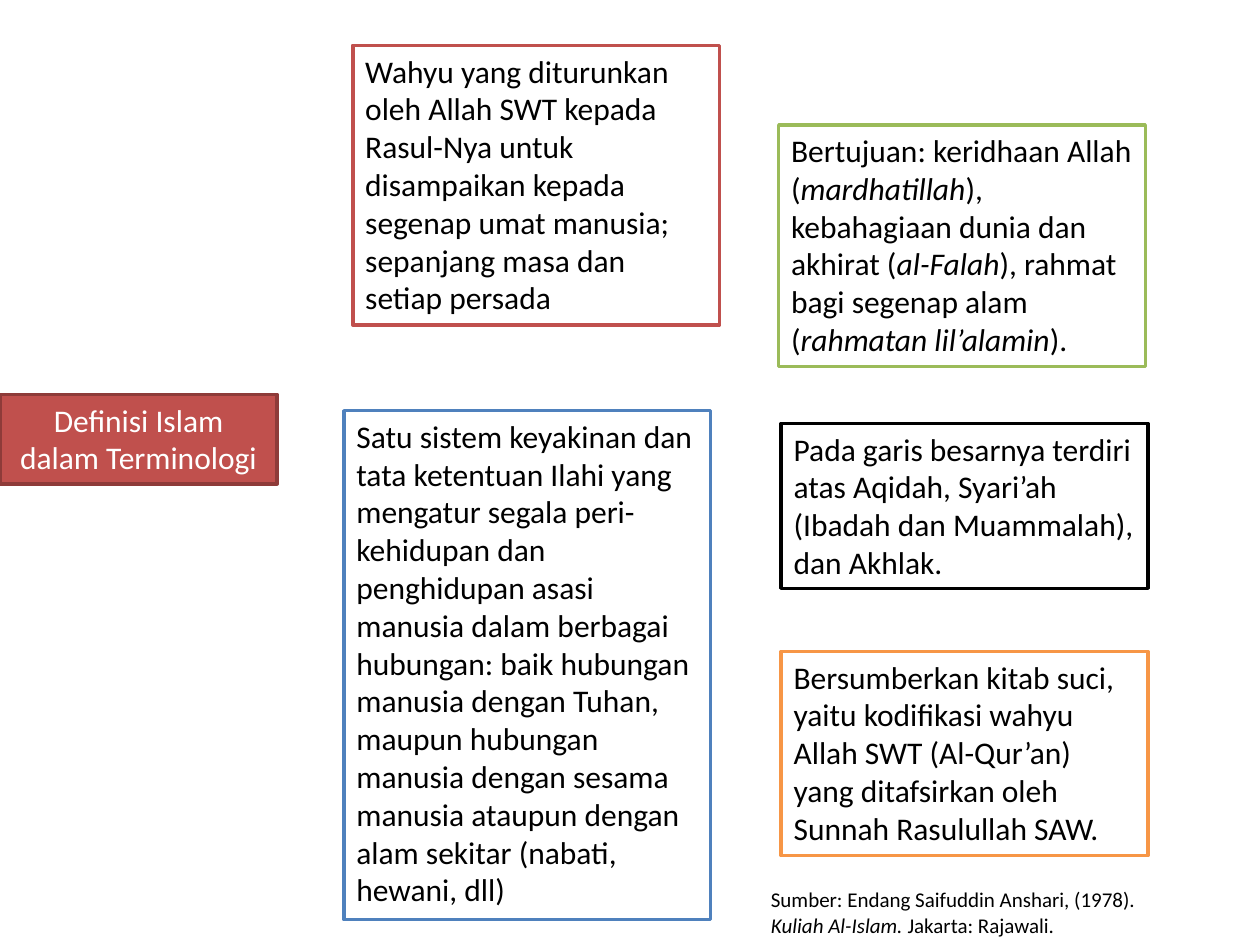
from pptx import Presentation
from pptx.dml.color import RGBColor
from pptx.enum.shapes import MSO_SHAPE
from pptx.enum.text import MSO_ANCHOR, MSO_AUTO_SIZE, PP_ALIGN
from pptx.util import Inches, Pt

COLS, ROWS = 100, 75
CELL = Inches(10) // COLS
WIDE = 29.1  # columns taken by each definition box

# left, top, height in grid cells, line colour, text (*italic*)
BOXES = [
    (28, 3.6, 22.2, "C0504D",
     "Wahyu yang diturunkan oleh Allah SWT kepada Rasul-Nya untuk "
     "disampaikan kepada segenap umat manusia; sepanjang masa dan "
     "setiap persada"),
    (27.3, 32.6, 40.4, "4F81BD",
     "Satu sistem keyakinan dan tata ketentuan Ilahi yang mengatur segala "
     "peri-kehidupan dan penghidupan asasi manusia dalam berbagai hubungan: "
     "baik hubungan manusia dengan Tuhan, maupun hubungan manusia dengan "
     "sesama manusia ataupun dengan alam sekitar (nabati, hewani, dll)"),
    (61.8, 9.9, 19.2, "9BBB59",
     "Bertujuan: keridhaan Allah (*mardhatillah*), kebahagiaan dunia dan "
     "akhirat (*al-Falah*), rahmat bagi segenap alam "
     "(*rahmatan lil’alamin*)."),
    (62, 33.6, 13.1, "000000",
     "Pada garis besarnya terdiri atas Aqidah, Syari’ah (Ibadah dan "
     "Muammalah), dan Akhlak."),
    (62, 51.7, 16.2, "F79646",
     "Bersumberkan kitab suci, yaitu kodifikasi wahyu Allah SWT (Al-Qur’an) "
     "yang ditafsirkan oleh Sunnah Rasulullah SAW."),
]


def paint(code):
    return RGBColor.from_string(code)


def place(*cells):
    """Turn grid cells into slide lengths."""
    return [round(n * CELL) for n in cells]


def write(shape, text, size=18, color="000000", align=PP_ALIGN.LEFT):
    """Fill a shape with text; parts between asterisks are italic."""
    frame = shape.text_frame
    frame.word_wrap = True
    frame.auto_size = MSO_AUTO_SIZE.SHAPE_TO_FIT_TEXT
    frame.vertical_anchor = MSO_ANCHOR.TOP
    para = frame.paragraphs[0]
    para.alignment = align
    for i, part in enumerate(text.split("*")):
        run = para.add_run()
        run.text = part
        font = run.font
        font.name, font.size, font.italic = "Calibri", Pt(size), i % 2 == 1
        font.color.rgb = paint(color)


def add_box(slide, area, text, fill, line, **style):
    box = slide.shapes.add_shape(MSO_SHAPE.RECTANGLE, *place(*area))
    box.shadow.inherit = False
    box.fill.solid()
    box.fill.fore_color.rgb = paint(fill)
    box.line.color.rgb = paint(line)
    box.line.width = Pt(2)
    write(box, text, **style)


def add_note(slide, area, text, **style):
    write(slide.shapes.add_textbox(*place(*area)), text, **style)


def main():
    deck = Presentation()
    deck.slide_width, deck.slide_height = place(COLS, ROWS)
    slide = deck.slides.add_slide(deck.slide_layouts[6])
    for left, top, high, line, text in BOXES:
        add_box(slide, (left, top, WIDE, high), text, "FFFFFF", line)
    add_box(slide, (0, 31.3, 22, 7.1), "Definisi Islam dalam Terminologi",
            "C0504D", "8E3B39", color="FFFFFF", align=PP_ALIGN.CENTER)
    add_note(slide, (60.2, 69.9, 35.4, 5),
             "Sumber: Endang Saifuddin Anshari, (1978). *Kuliah Al-Islam. *"
             "Jakarta: Rajawali.", size=12)
    deck.save("out.pptx")


if __name__ == "__main__":
    main()
